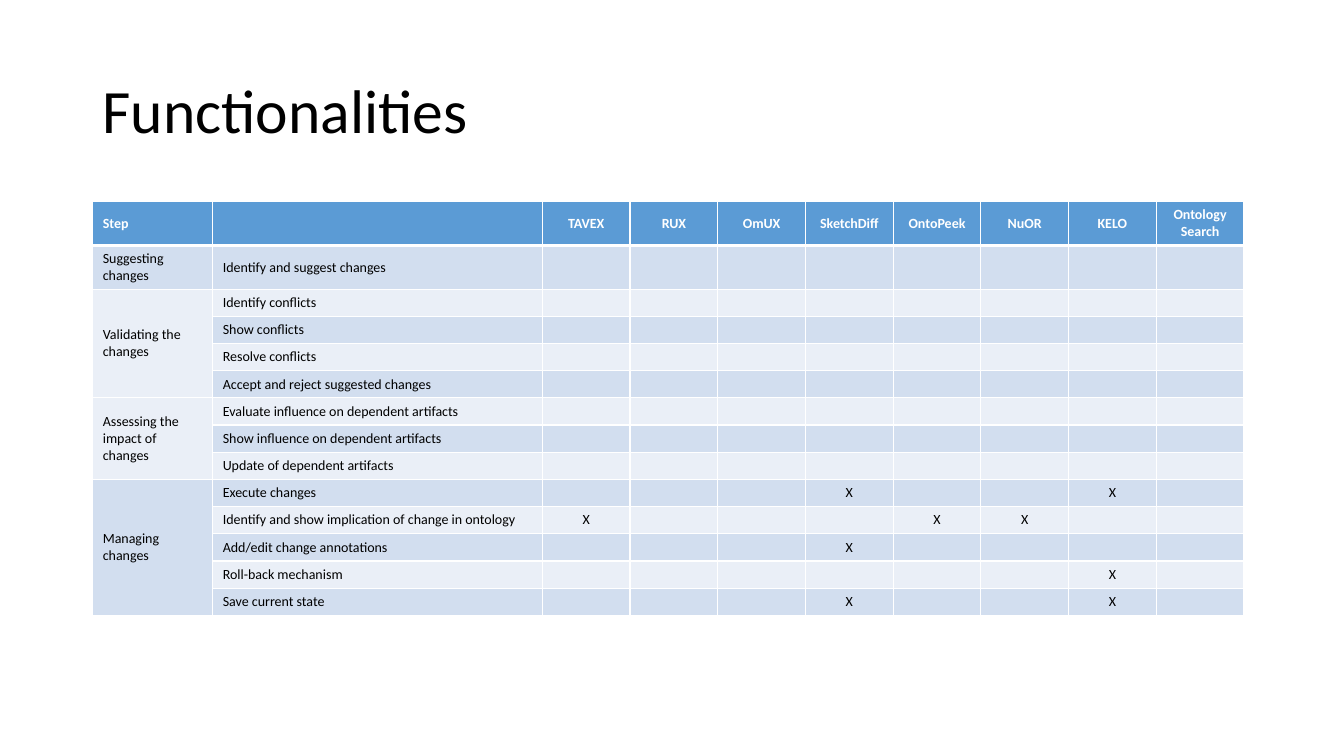
from dataclasses import dataclass

from lxml import etree
from pptx import Presentation
from pptx import util as u
from pptx.dml.color import RGBColor
from pptx.enum import text
from pptx.oxml import ns


@dataclass(frozen=True)
class Theme:
    font: str = "Calibri"
    title_size: int = 44
    table_size: int = 10
    ink: str = "000000"
    white: str = "FFFFFF"
    header: str = "5B9BD5"
    dark_band: str = "D2DEEF"
    light_band: str = "EAEFF7"
    thin: int = 1
    thick: int = 3


TOOLS = ["TAVEX", "RUX", "OmUX", "SketchDiff", "OntoPeek", "NuOR", "KELO",
         "Ontology\nSearch"]

# Each step lists its functions with the tools that offer them
STEPS = [
    ("Suggesting changes", [("Identify and suggest changes", [])]),
    ("Validating the changes", [
        ("Identify conflicts", []),
        ("Show conflicts", []),
        ("Resolve conflicts", []),
        ("Accept and reject suggested changes", []),
    ]),
    ("Assessing the impact of changes", [
        ("Evaluate influence on dependent artifacts", []),
        ("Show influence on dependent artifacts", []),
        ("Update of dependent artifacts", []),
    ]),
    ("Managing changes", [
        ("Execute changes", ["SketchDiff", "KELO"]),
        ("Identify and show implication of change in ontology",
         ["TAVEX", "OntoPeek", "NuOR"]),
        ("Add/edit change annotations", ["SketchDiff"]),
        ("Roll-back mechanism", ["KELO"]),
        ("Save current state", ["SketchDiff", "KELO"]),
    ]),
]


class SlideBuilder:
    def __init__(self, slide, theme):
        self.slide = slide
        self.theme = theme

    def add_run(self, paragraph, words, size, color, bold=False):
        run = paragraph.add_run()
        run.text = words
        run.font.name = self.theme.font
        run.font.size = u.Pt(size)
        run.font.bold = bold
        run.font.color.rgb = RGBColor.from_string(color)

    def title(self, words, left, top, width, height):
        box = self.slide.shapes.add_textbox(
            *(u.Inches(length) for length in (left, top, width, height)))
        frame = box.text_frame
        frame.word_wrap = True
        frame.vertical_anchor = text.MSO_ANCHOR.MIDDLE
        paragraph = frame.paragraphs[0]
        paragraph.line_spacing = 0.9
        self.add_run(paragraph, words, self.theme.title_size, self.theme.ink)

    def border(self, cell, side, width):
        properties = cell._tc.get_or_add_tcPr()
        line = etree.SubElement(properties, ns.qn(f"a:ln{side}"), w=str(u.Pt(width)))
        fill = etree.SubElement(line, ns.qn("a:solidFill"))
        etree.SubElement(fill, ns.qn("a:srgbClr"), val=self.theme.white)

    def cell(self, cell, words, row, column, fill):
        theme = self.theme
        is_header = row == 0
        cell.vertical_anchor = text.MSO_ANCHOR.MIDDLE
        # Thick rule between header and body
        self.border(cell, "L", theme.thin)
        self.border(cell, "R", theme.thin)
        self.border(cell, "T", theme.thick if row == 1 else theme.thin)
        self.border(cell, "B", theme.thick if is_header else theme.thin)
        cell.fill.solid()
        cell.fill.fore_color.rgb = RGBColor.from_string(fill)

        for index, line in enumerate(words.split("\n")):
            frame = cell.text_frame
            paragraph = frame.add_paragraph() if index else frame.paragraphs[0]
            if column > 1:
                paragraph.alignment = text.PP_ALIGN.CENTER
            if line:
                self.add_run(paragraph, line, theme.table_size,
                             theme.white if is_header else theme.ink, is_header)
            else:
                # Keeps empty cells as low as the text rows
                etree.SubElement(paragraph._p, ns.qn("a:endParaRPr"),
                                 sz=str(theme.table_size * 100))

    def table(self, rows, left, top, widths, heights):
        theme = self.theme
        table = self.slide.shapes.add_table(
            len(rows), len(widths), u.Inches(left), u.Inches(top),
            u.Inches(sum(widths)), u.Inches(sum(heights))).table
        for column, width in zip(table.columns, widths):
            column.width = u.Inches(width)
        for row, height in zip(table.rows, heights):
            row.height = u.Inches(height)
        for row, values in enumerate(rows):
            band = theme.dark_band if row % 2 else theme.light_band
            for column, words in enumerate(values):
                self.cell(table.cell(row, column), words, row, column,
                          band if row else theme.header)
        return table


def main():
    presentation = Presentation()
    presentation.slide_width = u.Inches(13.33)
    presentation.slide_height = u.Inches(7.5)
    slide = presentation.slides.add_slide(presentation.slide_layouts[6])
    builder = SlideBuilder(slide, Theme())

    # Title
    builder.title("Functionalities", 0.92, 0.4, 11.5, 1.45)

    # Table of functions against tools
    rows = [["Step", "", *TOOLS]]
    spans = []
    for step, functions in STEPS:
        spans.append((len(rows), len(rows) + len(functions) - 1))
        for index, (function, offered_by) in enumerate(functions):
            marks = ["X" if tool in offered_by else "" for tool in TOOLS]
            rows.append(["" if index else step, function, *marks])
    widths = [1.19, 3.27] + [0.87] * len(TOOLS)
    heights = [0.43] * 2 + [0.27] * (len(rows) - 2)
    table = builder.table(rows, 0.92, 2, widths, heights)

    # One step cell beside all its functions
    for first, last in spans:
        if last > first:
            table.cell(first, 0).merge(table.cell(last, 0))

    presentation.save("out.pptx")


if __name__ == "__main__":
    main()
